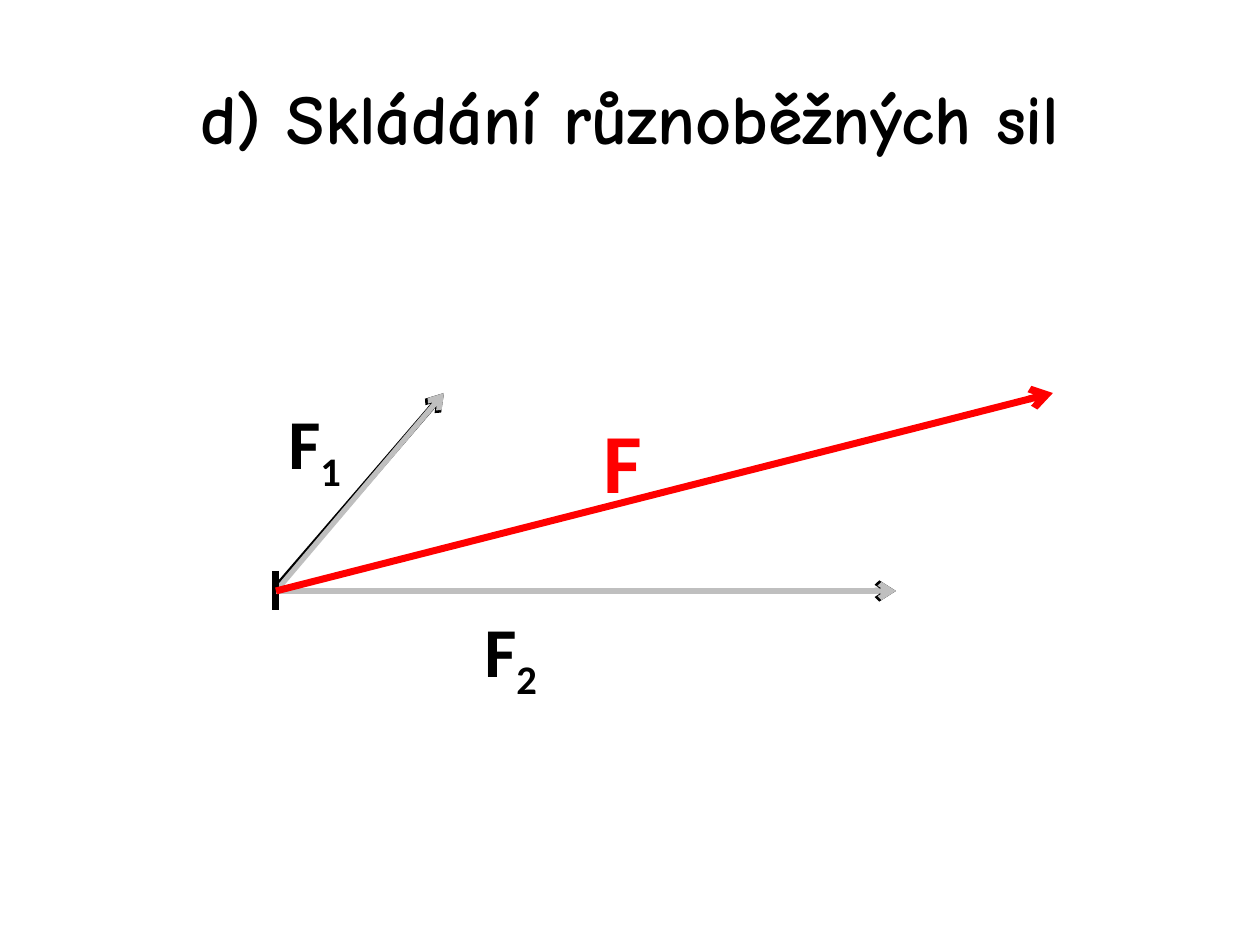
import pptx
import pptx.dml.color
import pptx.enum.shapes
import pptx.enum.text
import pptx.oxml
import pptx.oxml.ns
import pptx.util
from lxml import etree

PX = 914400 // 126
COLORS = {"black": "000000", "gray": "BFBFBF", "red": "FF0000"}
ORIGIN = (276, 591)
F1_TIP, F2_TIP, F_TIP = (444, 393), (896, 591), (1053, 393)

VECTORS_BELOW = [
    ((276, 588), F1_TIP, "black", 3.5, True),
    (ORIGIN, F2_TIP, "black", 3.5, True),
    (ORIGIN, F1_TIP, "gray", 3, True),
    ((276, 571), (276, 610), "black", 4, False),
]
VECTORS_ABOVE = [
    (ORIGIN, F2_TIP, "gray", 3, True),
    (ORIGIN, F_TIP, "red", 4, True),
]
TITLE = ((63, 38, 1134, 158), "d) Skládání různoběžných sil", "", "Comic Neue", 40, "black")
LABELS = [
    ((276, 393, 88, 97), "F", "1", "Calibri", 40, "black"),
    ((472, 601, 98, 97), "F", "2", "Calibri", 40, "black"),
    ((591, 403, 79, 115), "F", "", "Calibri", 48, "red"),
]


def emu(values):
    return [v * PX for v in values]


def rgb(color):
    return pptx.dml.color.RGBColor.from_string(COLORS[color])


def add_vectors(s, vectors):
    for start, end, color, width, arrow in vectors:
        line = s.shapes.add_connector(
            pptx.enum.shapes.MSO_CONNECTOR.STRAIGHT, *emu(start + end))
        line.line.color.rgb = rgb(color)
        line.line.width = pptx.util.Pt(width)
        if arrow:
            ln = line.line._get_or_add_ln()
            etree.SubElement(ln, pptx.oxml.ns.qn("a:tailEnd"), type="arrow")
        etree.SubElement(line._element.spPr, pptx.oxml.ns.qn("a:effectLst"))


def add_text(s, box, text, subscript, font, size, color):
    tf = s.shapes.add_textbox(*emu(box)).text_frame
    tf.word_wrap = True
    p = tf.paragraphs[0]
    formats = {"name": font, "size": pptx.util.Pt(size), "bold": True}
    for part, baseline in ((text, None), (subscript, "-25000")):
        if not part:
            continue
        r = p.add_run()
        r.text = part
        for key, value in formats.items():
            setattr(r.font, key, value)
        r.font.color.rgb = rgb(color)
        if baseline:
            r.font._element.set("baseline", baseline)
    return tf


def main():
    prs = pptx.Presentation()
    prs.slide_width, prs.slide_height = emu((1260, 945))
    s = prs.slides.add_slide(prs.slide_layouts[6])
    tf = add_text(s, *TITLE)
    tf.vertical_anchor = pptx.enum.text.MSO_ANCHOR.MIDDLE
    tf.paragraphs[0].alignment = pptx.enum.text.PP_ALIGN.CENTER
    add_vectors(s, VECTORS_BELOW)
    for label in LABELS:
        add_text(s, *label)
    add_vectors(s, VECTORS_ABOVE)
    prs.save("out.pptx")


if __name__ == "__main__":
    main()
